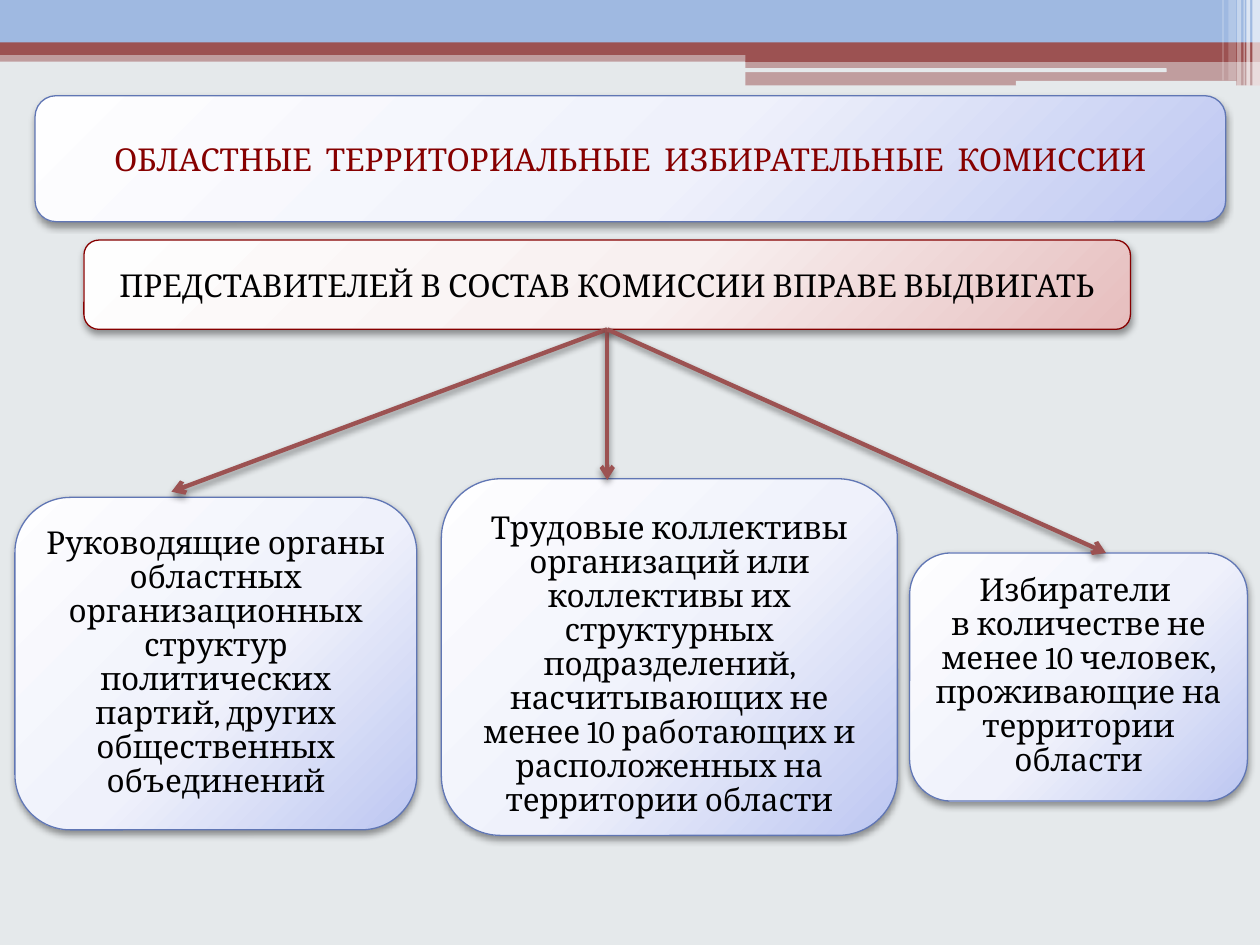
from lxml import etree
from pptx import Presentation
from pptx import util as u
from pptx.dml.color import RGBColor
from pptx.enum import shapes, text
from pptx.oxml.ns import qn

BACKGROUND = RGBColor(0xE5, 0xE9, 0xEB)
SKY = RGBColor(0x9F, 0xB9, 0xE1)
BRICK = RGBColor(0x9C, 0x52, 0x52)
WHITE = RGBColor(0xFF, 0xFF, 0xFF)
BLACK = RGBColor(0x00, 0x00, 0x00)
INDIGO = RGBColor(0x60, 0x76, 0xB4)
MAROON = RGBColor(0x86, 0x00, 0x00)
# Gradient stops: position in percent, colour
BLUE_TINT = ((0, RGBColor(0xFE, 0xFE, 0xFF)), (55, RGBColor(0xEF, 0xF1, 0xFB)),
             (100, RGBColor(0xBC, 0xC6, 0xF1)))
RED_TINT = ((0, RGBColor(0xFE, 0xFE, 0xFE)), (55, RGBColor(0xF8, 0xF0, 0xF0)),
            (100, RGBColor(0xE6, 0xBE, 0xBE)))


def add_xml(parent, tag, **attributes):
    values = {name: str(value) for name, value in attributes.items()}
    return etree.SubElement(parent, qn(tag), values)


def add_color(parent, color, alpha=100):
    node = add_xml(parent, "a:srgbClr", val=color)
    if alpha < 100:
        add_xml(node, "a:alpha", val=alpha * 1000)


class SlideBuilder:
    font = "Cambria"
    size = u.Pt(18)

    def __init__(self, slide):
        self.slide = slide

    def shape(self, kind, left, top, width, height):
        shape = self.slide.shapes.add_shape(
            kind, u.Pt(left), u.Pt(top), u.Pt(width), u.Pt(height))
        shape.shadow.inherit = False
        return shape

    def band(self, left, top, width, height, color, alpha=100, rounded=False):
        """Plain decorative strip."""
        kinds = shapes.MSO_SHAPE
        kind = kinds.ROUNDED_RECTANGLE if rounded else kinds.RECTANGLE
        band = self.shape(kind, left, top, width, height)
        band.fill.solid()
        band.fill.fore_color.rgb = color
        band.line.fill.background()
        if alpha < 100:
            solid = band._element.spPr.find(qn("a:solidFill"))
            add_xml(solid[0], "a:alpha", val=alpha * 1000)

    def shadow(self, effects, alpha, blur):
        outer = add_xml(effects, "a:outerShdw", blurRad=u.Pt(blur),
                        dist=u.Pt(2), dir=90 * 60000, rotWithShape=0)
        add_color(outer, BLACK, alpha)

    def gradient(self, shape, tint):
        """Radial gradient centred beyond the top left corner."""
        shape.fill.gradient()
        gradient = shape._element.spPr.find(qn("a:gradFill"))
        gradient.clear()
        stops = add_xml(gradient, "a:gsLst")
        for position, color in tint:
            add_color(add_xml(stops, "a:gs", pos=position * 1000), color)
        circle = add_xml(gradient, "a:path", path="circle")
        add_xml(circle, "a:fillToRect", l=-40000, t=-90000, r=140000, b=190000)

    def box(self, left, top, width, height, wording, tint=BLUE_TINT,
            outline=INDIGO, color=BLACK, insets=(7.2, 3.6), spacing=1.0,
            anchor=text.MSO_ANCHOR.MIDDLE):
        """Rounded box; insets are the sides and the top."""
        box = self.shape(shapes.MSO_SHAPE.ROUNDED_RECTANGLE,
                         left, top, width, height)
        self.gradient(box, tint)
        box.line.color.rgb = outline
        box.line.width = u.Pt(0.75)
        self.shadow(box._element.spPr.find(qn("a:effectLst")), 40, 4.1)
        frame = box.text_frame
        frame.word_wrap = True
        frame.vertical_anchor = anchor
        side, head = insets
        frame.margin_left = frame.margin_right = u.Pt(side)
        frame.margin_top = u.Pt(head)
        frame.margin_bottom = u.Pt(min(side, head))
        paragraph = frame.paragraphs[0]
        paragraph.text = wording
        paragraph.alignment = text.PP_ALIGN.CENTER
        paragraph.line_spacing = spacing
        for run in paragraph.runs:
            run.font.name = self.font
            run.font.size = self.size
            run.font.color.rgb = color
        return box

    def arrow(self, source, x, y):
        """Arrow from the bottom middle of a box to a point."""
        arrow = self.slide.shapes.add_connector(
            shapes.MSO_CONNECTOR.STRAIGHT, 0, 0, u.Pt(x), u.Pt(y))
        arrow.begin_connect(source, 2)
        arrow.line.color.rgb = BRICK
        arrow.line.width = u.Pt(2.5)
        properties = arrow._element.spPr
        add_xml(properties.find(qn("a:ln")), "a:tailEnd", type="arrow")
        self.shadow(add_xml(properties, "a:effectLst"), 45, 4)


def main():
    deck = Presentation()
    deck.slide_width, deck.slide_height = u.Pt(720), u.Pt(540)
    slide = deck.slides.add_slide(deck.slide_layouts[6])
    slide.background.fill.solid()
    slide.background.fill.fore_color.rgb = BACKGROUND
    builder = SlideBuilder(slide)

    # Header bands
    builder.band(0, 28.8, 720, 6.5, BRICK, 50)
    builder.band(0, 0, 720, 24.5, SKY)
    builder.band(0, 24.2, 720, 7.2, BRICK)
    builder.band(426, 28.2, 294, 7.2, BRICK)
    builder.band(426, 34.6, 294, 14.2, BRICK, 50)
    builder.band(425.5, 39, 241.2, 2.2, BACKGROUND, rounded=True)
    builder.band(580.5, 46.2, 126, 2.9, BACKGROUND, rounded=True)

    # Light vertical stripes in the corner
    for left, width, height, alpha in (
            (715.6, 4.3, 49, 65), (712.2, 2.2, 49, 65), (710.6, 0.7, 49, 60),
            (707, 2.2, 49, 40), (702, 4.3, 46, 20), (698.5, 0.7, 46, 30)):
        builder.band(left, 0, width, height, WHITE, alpha)

    # Title
    builder.box(20, 54.7, 680.4, 72,
                "ОБЛАСТНЫЕ  ТЕРРИТОРИАЛЬНЫЕ  ИЗБИРАТЕЛЬНЫЕ  КОМИССИИ",
                color=MAROON)

    # Who may nominate members
    builder.box(8.5, 284.2, 229.7, 190,
                "Руководящие органы областных организационных структур "
                "политических партий, других общественных объединений",
                insets=(5, 5), spacing=0.9)
    builder.box(252.2, 273.6, 260.6, 203.8,
                "Трудовые коллективы организаций или коллективы их "
                "структурных подразделений, насчитывающих не менее "
                "10 работающих и расположенных на территории области",
                insets=(5, 14), spacing=0.9)
    builder.box(519.8, 316, 193, 141.8,
                "Избиратели \vв количестве не менее 10 человек, "
                "проживающие на территории области",
                insets=(5, 5), spacing=0.9, anchor=text.MSO_ANCHOR.TOP)

    # Right to nominate, with arrows to the nominators
    right_to_nominate = builder.box(
        48, 137.2, 598, 51,
        "ПРЕДСТАВИТЕЛЕЙ В СОСТАВ КОМИССИИ ВПРАВЕ ВЫДВИГАТЬ",
        tint=RED_TINT, outline=MAROON)
    for x, y in ((98, 281), (347, 274.3), (632, 316)):
        builder.arrow(right_to_nominate, x, y)

    deck.save("out.pptx")


if __name__ == "__main__":
    main()
